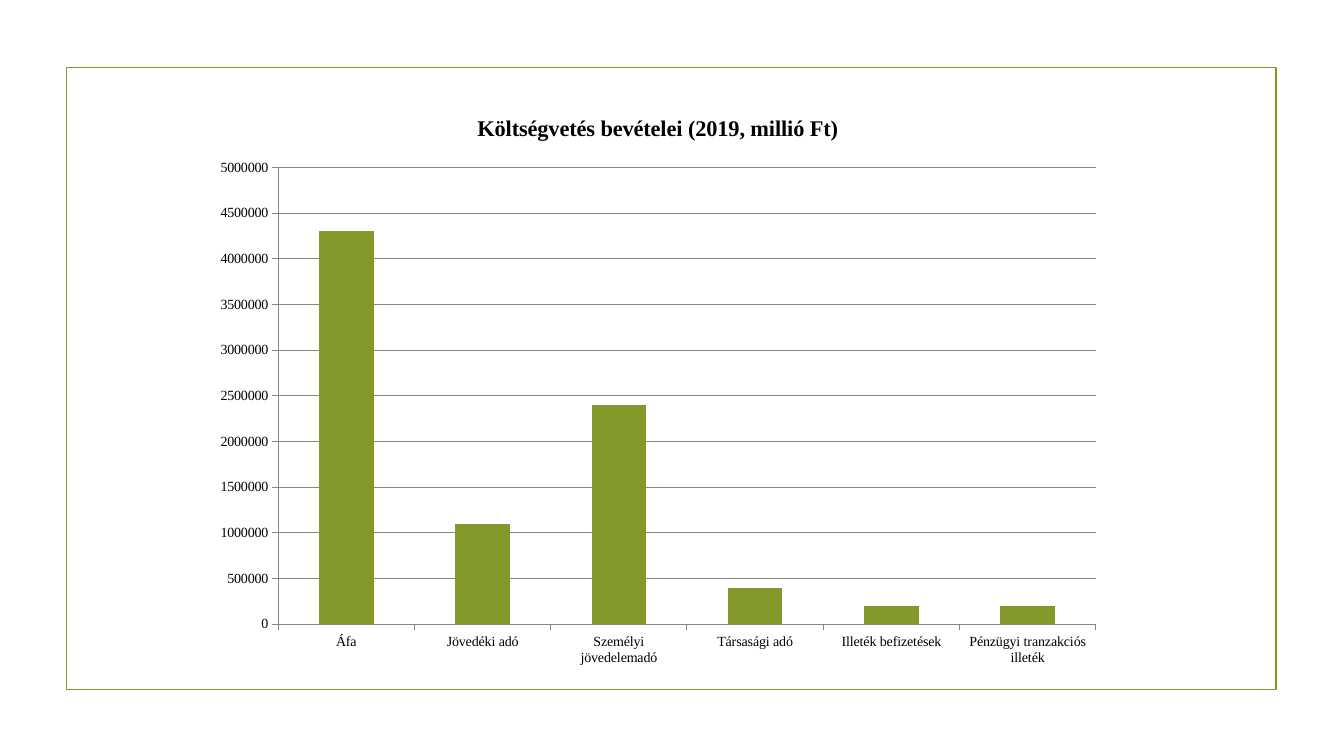
from dataclasses import dataclass

from pptx import Presentation
from pptx.chart.data import CategoryChartData
from pptx.dml.color import RGBColor
from pptx.enum.chart import XL_CHART_TYPE, XL_TICK_MARK
from pptx.enum.shapes import MSO_SHAPE
from pptx.oxml import parse_xml
from pptx.oxml.ns import nsdecls, qn
from pptx.util import Inches, Pt


@dataclass(frozen=True)
class Theme:
    """Hold the colours, font and sizes of the slide."""
    green: RGBColor = RGBColor(0x83, 0x99, 0x2A)
    black: RGBColor = RGBColor(0, 0, 0)
    grey: RGBColor = RGBColor(0x86, 0x86, 0x86)
    font: str = "Times New Roman"
    title: float = 16
    label: float = 10
    border: float = 1.25
    grid: float = 0.75


THEME = Theme()
TITLE = "Költségvetés bevételei (2019, millió Ft)"
TAXES = {
    "Áfa": 4300000,
    "Jövedéki adó": 1100000,
    "Személyi jövedelemadó": 2400000,
    "Társasági adó": 400000,
    "Illeték befizetések": 200000,
    "Pénzügyi tranzakciós illeték": 200000,
}


def style(font, size=THEME.label, bold=False, color=THEME.black):
    """Set the face, size, weight and colour of a font."""
    font.name, font.size, font.bold = THEME.font, Pt(size), bold
    font.color.rgb = color


def write(frame, text, **form):
    """Put formatted text into a text frame."""
    frame.text = text
    style(frame.paragraphs[0].runs[0].font, **form)


def rule(line, color=THEME.grey, width=THEME.grid):
    """Set the colour and width of a line."""
    line.color.rgb = color
    line.width = Pt(width)


def add_frame(slide, left, top, width, height):
    """Draw the green border."""
    frame = slide.shapes.add_shape(
        MSO_SHAPE.RECTANGLE, Inches(left), Inches(top), Inches(width), Inches(height))
    frame.shadow.inherit = False
    frame.fill.background()
    rule(frame.line, THEME.green, THEME.border)


def place_plot(chart, **box):
    """Fix the inner plot area as shares of the chart."""
    plot = chart.element.find(".//" + qn("c:plotArea"))
    for old in plot.findall(qn("c:layout")):
        plot.remove(old)
    parts = "".join(f'<c:{key} val="{val}"/>' for key, val in box.items())
    plot.insert(0, parse_xml(
        f'<c:layout {nsdecls("c")}><c:manualLayout><c:layoutTarget val="inner"/>'
        f'<c:xMode val="edge"/><c:yMode val="edge"/>{parts}'
        '</c:manualLayout></c:layout>'))


def add_bars(slide, left, top, width, height):
    """Draw the column chart of tax income."""
    data = CategoryChartData(number_format="General")
    data.categories = list(TAXES)
    data.add_series("Series 1", list(TAXES.values()))
    chart = slide.shapes.add_chart(
        XL_CHART_TYPE.COLUMN_CLUSTERED, Inches(left), Inches(top),
        Inches(width), Inches(height), data).chart
    style(chart.font)
    chart.has_legend = False
    chart.has_title = True
    write(chart.chart_title.text_frame, TITLE, size=THEME.title, bold=True)
    chart.chart_title.include_in_layout = False
    place_plot(chart, x=0.083, y=0.128, w=0.898, h=0.781)

    plot = chart.plots[0]
    plot.gap_width = 150
    plot.vary_by_categories = False
    fill = plot.series[0].format.fill
    fill.solid()
    fill.fore_color.rgb = THEME.green

    for axis in (chart.category_axis, chart.value_axis):
        axis.major_tick_mark = XL_TICK_MARK.OUTSIDE
        axis.minor_tick_mark = XL_TICK_MARK.NONE
        rule(axis.format.line)
    scale = chart.value_axis
    scale.minimum_scale, scale.maximum_scale = 0, 5000000
    scale.major_unit = 500000
    scale.has_major_gridlines = True
    rule(scale.major_gridlines.format.line)


def main():
    """Build and save the slide."""
    deck = Presentation()
    deck.slide_width, deck.slide_height = Inches(13.33), Inches(7.5)
    slide = deck.slides.add_slide(deck.slide_layouts[6])
    add_frame(slide, 0.66, 0.67, 12, 6.17)
    add_bars(slide, 2.01, 0.92, 9.03, 5.8)
    deck.save("out.pptx")


if __name__ == "__main__":
    main()
